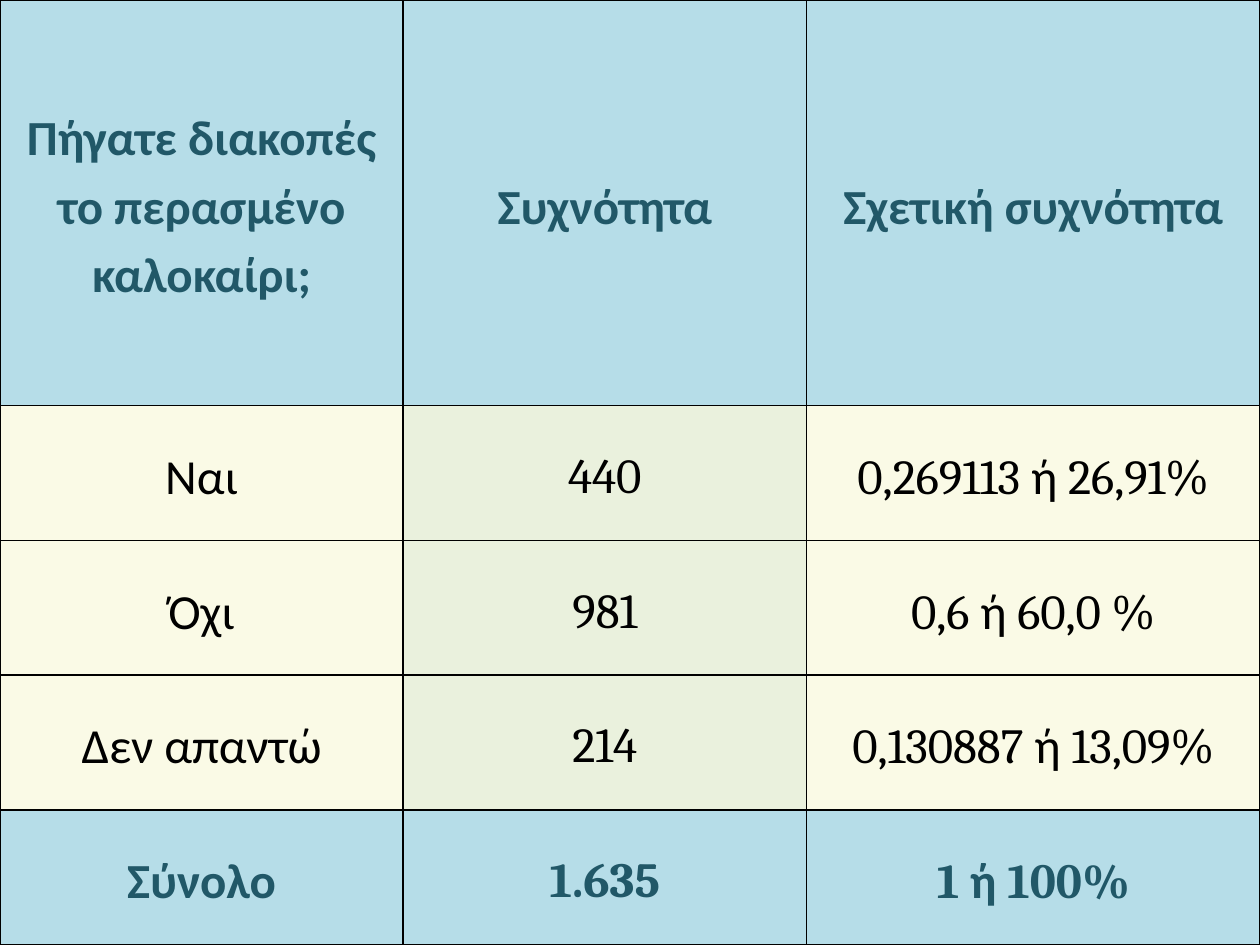
from lxml.etree import SubElement
from pptx import Presentation
from pptx.dml.color import RGBColor
from pptx.enum.text import MSO_ANCHOR as Anchor, PP_ALIGN as Align
from pptx.oxml.ns import qn
from pptx.util import Inches, Pt

BLUE = RGBColor(0xB6, 0xDD, 0xE8)
CREAM = RGBColor(0xFA, 0xFA, 0xE6)
GREEN = RGBColor(0xEA, 0xF1, 0xDD)
TEAL = RGBColor(0x21, 0x58, 0x68)
BLACK = RGBColor(0, 0, 0)

ROWS = [
    ["Πήγατε διακοπές το περασμένο καλοκαίρι;", "Συχνότητα", "Σχετική συχνότητα"],
    ["Ναι", "440", "0,269113 ή 26,91%"],
    ["Όχι", "981", "0,6 ή 60,0 %"],
    ["Δεν απαντώ", "214", "0,130887 ή 13,09%"],
    ["Σύνολο", "1.635", "1 ή 100%"],
]
COLUMN_WIDTHS = [3.2, 3.2, 3.6]
ROW_HEIGHTS = [3.22] + [1.07] * 4
BODY_FILLS = [CREAM, GREEN, CREAM]


def write_cell(cell, text, numeric=False, color=BLACK, bold=False, fill=CREAM):
    cell.fill.solid()
    cell.fill.fore_color.rgb = fill
    cell.vertical_anchor = Anchor.MIDDLE
    cell.margin_left = cell.margin_right = Inches(0.07)
    cell.margin_top = cell.margin_bottom = 0
    para = cell.text_frame.paragraphs[0]
    para.alignment = Align.CENTER
    para.line_spacing = 1.15
    para.space_before = para.space_after = Pt(3)
    parts = text.partition("ή") if numeric else [text]
    for part in filter(None, parts):
        span = para.add_run()
        span.text = part
        span.font.name = "Cambria" if numeric and part != "ή" else "Calibri"
        span.font.size = Pt(28)
        span.font.bold = bold
        span.font.color.rgb = color


def add_borders(cell):
    properties = cell._tc.get_or_add_tcPr()
    for index, side in enumerate(["a:lnL", "a:lnR", "a:lnT", "a:lnB"]):
        line = SubElement(properties, qn(side), w=str(Pt(1)))
        solid = SubElement(line, qn("a:solidFill"))
        SubElement(solid, qn("a:srgbClr"), val=str(BLACK))
        properties.insert(index, line)


deck = Presentation()
deck.slide_width = Inches(10)
deck.slide_height = Inches(7.5)
page = deck.slides.add_slide(deck.slide_layouts[6])

table = page.shapes.add_table(
    len(ROWS), len(COLUMN_WIDTHS), 0, 0, Inches(10), Inches(7.5)
).table
table.horz_banding = False
for column, width in zip(table.columns, COLUMN_WIDTHS):
    column.width = Inches(width)
for row, height in zip(table.rows, ROW_HEIGHTS):
    row.height = Inches(height)

last_row = len(ROWS) - 1
for row_index, texts in enumerate(ROWS):
    accent = row_index in (0, last_row)
    for column_index, text in enumerate(texts):
        cell = table.cell(row_index, column_index)
        write_cell(
            cell,
            text,
            numeric=row_index > 0 and column_index > 0,
            color=TEAL if accent else BLACK,
            bold=accent,
            fill=BLUE if accent else BODY_FILLS[column_index],
        )
        add_borders(cell)

deck.save("out.pptx")
